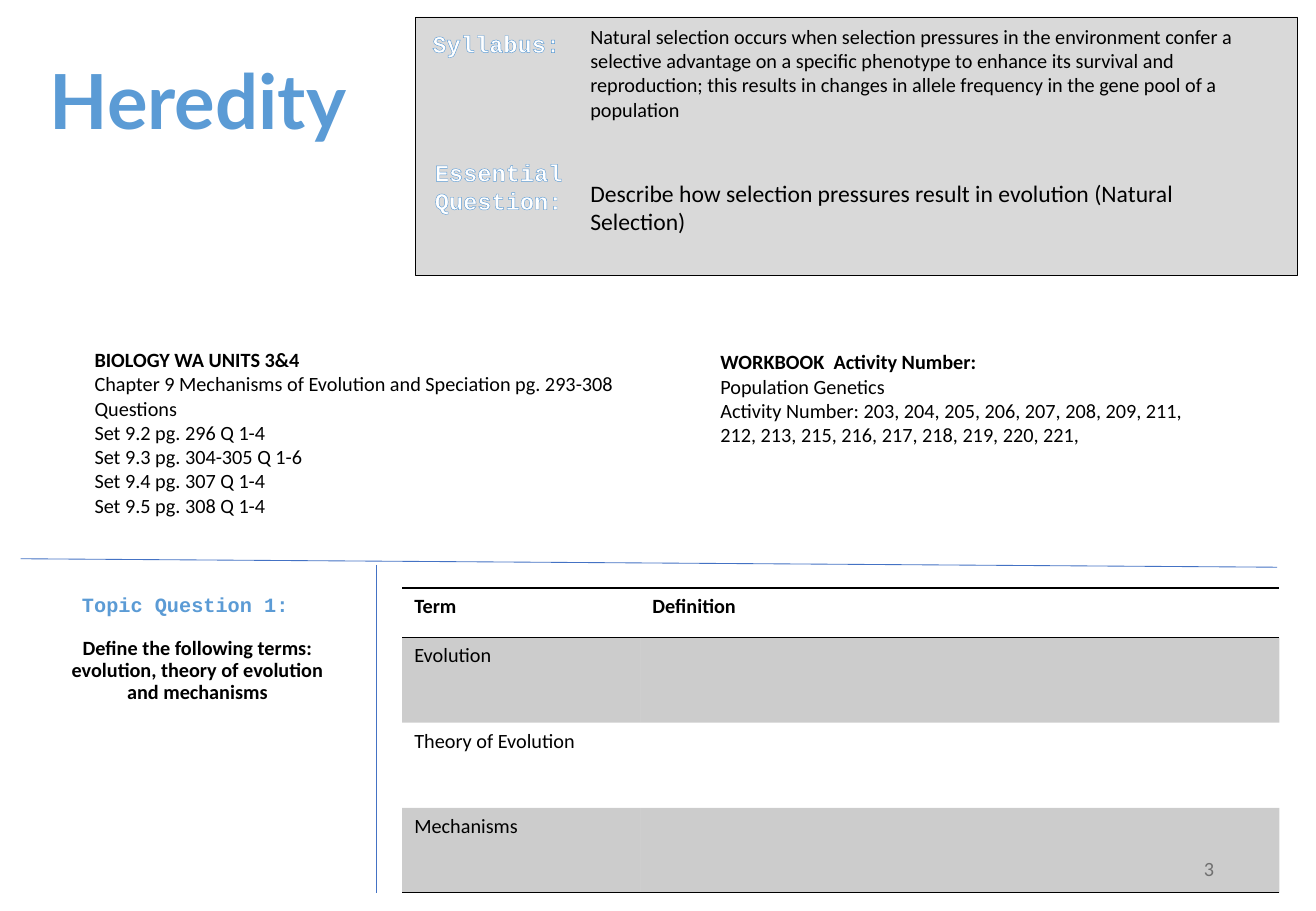
import pptx
import pptx.util
import pptx.dml.color
import pptx.enum.shapes
import pptx.enum.text
import pptx.oxml
import pptx.oxml.ns
from lxml import etree

Inches = pptx.util.Inches
Pt = pptx.util.Pt
ALIGN = pptx.enum.text.PP_ALIGN
ANCHOR = pptx.enum.text.MSO_ANCHOR
BLACK, WHITE, SKY, BLUE, GREY = "000000", "FFFFFF", "5B9BD5", "4472C4", "D9D9D9"

# Formats
BODY = {"size": 12, "name": "Calibri", "color": BLACK}
BOLD = {**BODY, "bold": True}
QUESTION = {**BODY, "size": 14, "space_before": 34}
TITLE = {"size": 45, "name": "Lato", "color": SKY, "bold": True, "alignment": ALIGN.CENTER}
LABEL = {"size": 14, "name": "Courier New", "color": WHITE, "bold": True, "outline": SKY}
TOPIC = {"size": 12, "name": "Courier New", "color": SKY, "bold": True,
         "alignment": ALIGN.CENTER, "line_spacing": 0.9}
TASK = {**TOPIC, "name": "Calibri", "color": BLACK, "space_before": 13}
NUMBER = {**BODY, "color": "8C8C8C", "alignment": ALIGN.RIGHT}

# Content: (left, top, width, height), anchor, lines of (text, format)
PANEL = (3.42, 0.14, 7.26, 2.13)
TEXTS = [
    ((0, 0.39, 3.26, 0.86), ANCHOR.TOP, [("Heredity", TITLE)]),
    ((3.46, 0.19, 2.08, 0.37), ANCHOR.TOP, [("Syllabus:", LABEL)]),
    ((3.48, 1.25, 1.27, 0.57), ANCHOR.TOP, [("Essential", LABEL), ("Question:", LABEL)]),
    ((0.68, 2.81, 6.57, 1.53), ANCHOR.TOP, [
        ("BIOLOGY WA UNITS 3&4", BOLD),
        ("Chapter 9 Mechanisms of Evolution and Speciation pg. 293-308", BODY),
        ("Questions", BODY),
        ("Set 9.2 pg. 296 Q 1-4", BODY),
        ("Set 9.3 pg. 304-305 Q 1-6", BODY),
        ("Set 9.4 pg. 307 Q 1-4", BODY),
        ("Set 9.5 pg. 308 Q 1-4", BODY)]),
    ((5.83, 2.83, 4.25, 1.11), ANCHOR.TOP, [
        ("WORKBOOK  Activity Number:", BOLD),
        ("Population Genetics", BODY),
        ("Activity Number: 203, 204, 205, 206, 207, 208, 209, 211, 212, 213, 215, "
         "216, 217, 218, 219, 220, 221,", BODY)]),
    ((7.65, 6.95, 2.44, 0.4), ANCHOR.MIDDLE, [("3", NUMBER)]),
    ((4.76, 0.15, 5.64, 1.77), ANCHOR.TOP, [
        ("Natural selection occurs when selection pressures in the environment confer a "
         "selective advantage on a specific phenotype to enhance its survival and "
         "reproduction; this results in changes in allele frequency in the gene pool of "
         "a population", BODY),
        ("Describe how selection pressures result in evolution (Natural Selection)", QUESTION)]),
    ((0.45, 4.97, 2.35, 0.75), ANCHOR.MIDDLE, [
        ("Topic Question 1:  ", TOPIC),
        ("Define the following terms: evolution, theory of evolution and mechanisms", TASK)]),
]
RULES = [((0.17, 4.6), (10.51, 4.67)), ((3.1, 4.65), (3.1, 7.35))]
TERMS = [("Term", "Definition"), ("Evolution", ""), ("Theory of Evolution", ""), ("Mechanisms", "")]
TABLE_LEFT, TABLE_TOP = 3.31, 4.84
COLUMNS, ROWS = (1.96, 5.26), (0.41, 0.7, 0.7, 0.7)
NO_STYLE = "{2D5ABB26-0587-4C30-8999-92F81FD0307C}"


def rgb(color):
    return pptx.dml.color.RGBColor.from_string(color)


def line_xml(tag, color, points):
    return pptx.oxml.parse_xml(
        f'<a:{tag} {pptx.oxml.ns.nsdecls("a")} w="{Pt(points)}"><a:solidFill>'
        f'<a:srgbClr val="{color}"/></a:solidFill></a:{tag}>')


def write(frame, lines):
    for index, (text, style) in enumerate(lines):
        para = frame.paragraphs[0] if index == 0 else frame.add_paragraph()
        span = para.add_run()
        span.text = text
        for key, value in style.items():
            if key == "color":
                span.font.color.rgb = rgb(value)
            elif key == "outline":
                span.font._element.insert(0, line_xml("ln", value, 0.8))
            elif key in ("alignment", "line_spacing"):
                setattr(para, key, value)
            elif key == "space_before":
                para.space_before = Pt(value)
            else:
                setattr(span.font, key, Pt(value) if key == "size" else value)


deck = pptx.Presentation()
deck.slide_width, deck.slide_height = Inches(10.83), Inches(7.5)
page = deck.slides.add_slide(deck.slide_layouts[6])

# Grey panel behind the syllabus
panel = page.shapes.add_shape(pptx.enum.shapes.MSO_SHAPE.RECTANGLE, *map(Inches, PANEL))
panel.shadow.inherit = False
panel.fill.solid()
panel.fill.fore_color.rgb = rgb(GREY)
panel.line.color.rgb = rgb(BLACK)
panel.line.width = Pt(0.5)

# Texts
for place, anchor, lines in TEXTS:
    box = page.shapes.add_textbox(*map(Inches, place))
    box.text_frame.word_wrap = True
    box.text_frame.vertical_anchor = anchor
    write(box.text_frame, lines)

# Dividing lines
for start, end in RULES:
    rule = page.shapes.add_connector(
        pptx.enum.shapes.MSO_CONNECTOR.STRAIGHT, *map(Inches, start + end))
    rule.line.color.rgb = rgb(BLUE)
    rule.line.width = Pt(0.5)
    etree.SubElement(rule._element.spPr, pptx.oxml.ns.qn("a:effectLst"))

# Table of terms
table = page.shapes.add_table(
    len(ROWS), len(COLUMNS), Inches(TABLE_LEFT), Inches(TABLE_TOP),
    Inches(sum(COLUMNS)), Inches(sum(ROWS))).table
table._tbl.tblPr.find(pptx.oxml.ns.qn("a:tableStyleId")).text = NO_STYLE
table.horz_banding = False
for column, width in zip(table.columns, COLUMNS):
    column.width = Inches(width)
for r, (height, words) in enumerate(zip(ROWS, TERMS)):
    table.rows[r].height = Inches(height)
    for c, word in enumerate(words):
        cell = table.cell(r, c)
        if word:
            write(cell.text_frame, [(word, BOLD if r == 0 else BODY)])
        if r % 2:
            cell.fill.solid()
            cell.fill.fore_color.rgb = rgb(BLACK)
            shade = cell._tc.tcPr.find(".//" + pptx.oxml.ns.qn("a:srgbClr"))
            etree.SubElement(shade, pptx.oxml.ns.qn("a:alpha"), val="20000")
        else:
            cell.fill.background()
        edges = {0: ("lnT", "lnB"), len(ROWS) - 1: ("lnB",)}.get(r, ())
        for position, edge in enumerate(edges):
            cell._tc.tcPr.insert(position, line_xml(edge, BLACK, 1))

deck.save("out.pptx")
